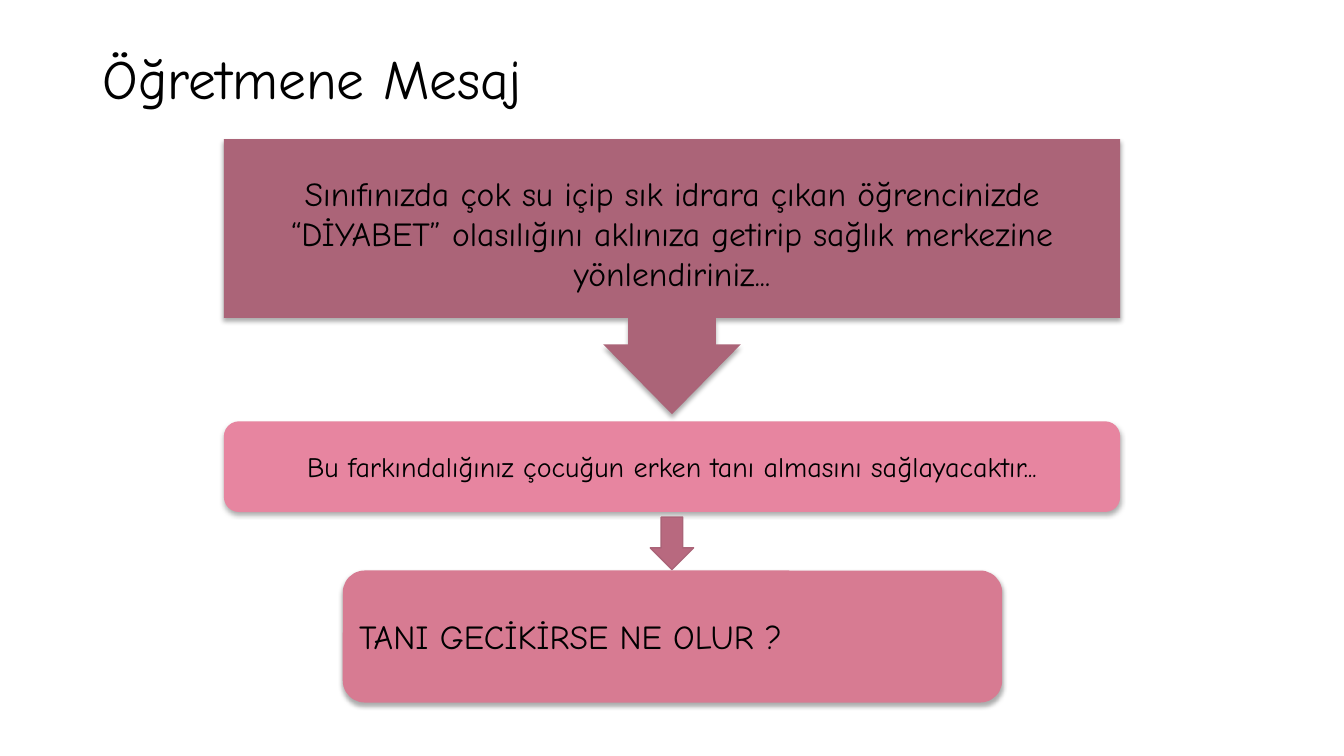
from lxml import etree
from pptx import Presentation
from pptx.dml.color import RGBColor
from pptx.enum.shapes import MSO_SHAPE
from pptx.enum.text import MSO_ANCHOR, MSO_AUTO_SIZE, PP_ALIGN
from pptx.oxml.ns import qn
from pptx.util import Emu, Pt

CALLOUT = MSO_SHAPE.DOWN_ARROW_CALLOUT
ROUNDED = MSO_SHAPE.ROUNDED_RECTANGLE
ARROW = MSO_SHAPE.DOWN_ARROW
MIDDLE = MSO_ANCHOR.MIDDLE
NO_AUTOFIT = MSO_AUTO_SIZE.NONE
LEFT, CENTER = PP_ALIGN.LEFT, PP_ALIGN.CENTER

BLACK = RGBColor(0x00, 0x00, 0x00)
PLUM = RGBColor(0xAB, 0x64, 0x78)
PINK = RGBColor(0xE7, 0x85, 0xA0)
ROSE = RGBColor(0xD7, 0x7B, 0x92)
MAUVE = RGBColor(0xB8, 0x69, 0x7F)

SCALE = 9144  # EMU per px, at 100 px to the inch
SLIDE_WIDTH, SLIDE_HEIGHT = 1333, 750


def px(length):
    return Emu(length * SCALE)


class SlideBuilder:
    """Holds the text style and the current slide."""

    font_name = "Comic Neue"
    text_color = BLACK

    def __init__(self, presentation):
        title_only = presentation.slide_layouts[5]
        self.slide = presentation.slides.add_slide(title_only)

    def set_text(self, shape, text, size, alignment):
        frame = shape.text_frame
        frame.text = text
        frame.word_wrap = True
        frame.auto_size = NO_AUTOFIT
        frame.vertical_anchor = MIDDLE
        paragraph = frame.paragraphs[0]
        paragraph.alignment = alignment
        font = paragraph.runs[0].font
        font.name = self.font_name
        font.size = Pt(size)
        font.color.rgb = self.text_color
        return paragraph

    def title(self, text, left, top, width, height, size):
        shape = self.slide.shapes.title
        shape.left, shape.top = px(left), px(top)
        shape.width, shape.height = px(width), px(height)
        self.set_text(shape, text, size, LEFT).line_spacing = 0.9

    def block(self, kind, left, top, width, height, fill):
        shape = self.slide.shapes.add_shape(
            kind, px(left), px(top), px(width), px(height))
        shape.shadow.inherit = False
        shape.fill.solid()
        shape.fill.fore_color.rgb = fill
        shape.line.fill.background()
        return shape

    def message(self, kind, box, fill, text, size, alignment=CENTER):
        shape = self.block(kind, *box, fill)
        self.add_shadow(shape)
        self.set_text(shape, text, size, alignment)
        return shape

    def arrow(self, box, fill, outline):
        shape = self.block(ARROW, *box, fill)
        shape.line.color.rgb = outline
        shape.line.width = Pt(1)

    def add_shadow(self, shape):
        effects = shape.element.spPr.find(qn("a:effectLst"))
        shadow = etree.SubElement(
            effects, qn("a:outerShdw"), blurRad=str(Pt(3.5)),
            dist=str(Pt(2.2)), dir="5400000", rotWithShape="0")
        color = etree.SubElement(shadow, qn("a:srgbClr"), val=str(BLACK))
        etree.SubElement(color, qn("a:alpha"), val="32000")


def main():
    presentation = Presentation()
    presentation.slide_width = px(SLIDE_WIDTH)
    presentation.slide_height = px(SLIDE_HEIGHT)
    builder = SlideBuilder(presentation)

    # Title
    builder.title("Öğretmene Mesaj", 92, 45, 1150, 72, 39.6)

    # Closing question
    builder.message(ROUNDED, (340, 566, 654, 131), ROSE,
                    "TANI GECİKİRSE NE OLUR ?", 24, LEFT)

    # Advice to the teacher, pointing down
    callout = builder.message(
        CALLOUT, (222, 138, 889, 273), PLUM,
        "Sınıfınızda çok su içip sık idrara çıkan öğrencinizde “DİYABET” "
        "olasılığını aklınıza getirip sağlık merkezine yönlendiriniz...", 24)
    for index, value in enumerate((0.318, 0.25, 0.254, 0.65)):
        callout.adjustments[index] = value
    callout.text_frame.margin_top = px(14)

    # Benefit of early awareness
    builder.message(
        ROUNDED, (222, 418, 889, 90), PINK,
        "Bu farkındalığınız çocuğun erken tanı almasını sağlayacaktır...", 20)

    # Arrow to the question
    builder.arrow((645, 513, 43, 52), MAUVE, PLUM)

    presentation.save("out.pptx")


if __name__ == "__main__":
    main()
